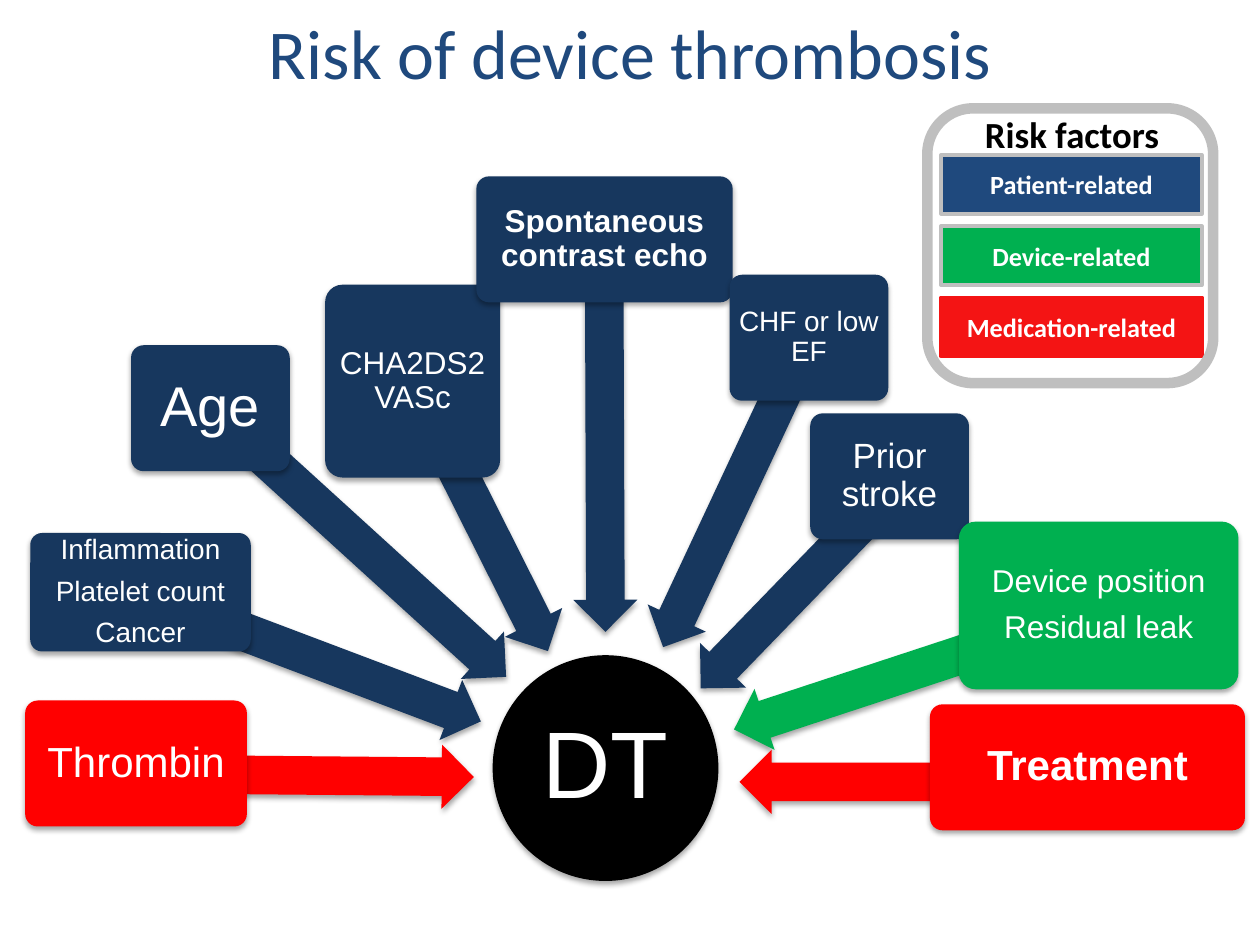
from lxml.etree import SubElement
from pptx import Presentation
from pptx.dml.color import RGBColor
from pptx.enum.shapes import MSO_SHAPE
from pptx.enum.text import MSO_ANCHOR, MSO_AUTO_SIZE, PP_ALIGN
from pptx.oxml.ns import qn
from pptx.util import Pt

NAVY, GREEN, RED, WHITE, GREY = "17375E", "00B050", "FF0000", "FFFFFF", "BFBFBF"
THICK = 36.7

FACTORS = [
    ("Inflammation\nPlatelet count\nCancer", (17.3, 304.6, 126, 67.7), 16, 2.2, False, NAVY,
     (73.4, 357.1, 208.1, 200.7)),
    ("Thrombin", (14.4, 400.3, 126.7, 72), 24, 3.6, False, RED, (77.8, 424.8, 193, 180.5)),
    ("Age", (74.9, 197.3, 90.7, 72), 32, 5, False, NAVY, (90.7, 291.6, 228.2, 222.3)),
    ("CHA2DS2VASc", (185.8, 162.7, 100, 110.2), 18, 2.9, False, NAVY,
     (187.9, 276.5, 172.8, 243.3)),
    ("Spontaneous contrast echo", (272.2, 100.8, 146.5, 72), 18, 2.9, True, NAVY,
     (233.3, 230.4, 224.6, 269.8)),
    ("CHF or low EF", (416.9, 157, 90.7, 72), 16, 2.2, False, NAVY,
     (322.6, 262.8, 195.8, 295.1)),
    ("Prior stroke", (463, 236.2, 90.7, 72), 20, 2.9, False, NAVY,
     (375.8, 316.8, 162, 314.1)),
    ("Device position\nResidual leak", (547.9, 298.1, 159.8, 95.8), 18, 2.9, False, GREEN,
     (414, 364.3, 218.9, 341.8)),
    ("Treatment", (531.4, 402.5, 180, 72), 24, 3.6, True, RED, (422.6, 428.4, 198.7, 0)),
]
KEYS = [("Patient-related", "1F497D", GREY), ("Device-related", GREEN, GREY),
        ("Medication-related", "F41414", "F41414")]


def tint(code):
    """Turn a hex string into a colour."""
    return RGBColor.from_string(code)


def shade(shape):
    """Give the shape a soft shadow straight below it."""
    effects = shape._element.spPr.find(qn("a:effectLst"))
    shadow = SubElement(effects, qn("a:outerShdw"), blurRad=str(Pt(3.1)), dist=str(Pt(1.8)),
                        dir="5400000", rotWithShape="0")
    black = SubElement(shadow, qn("a:srgbClr"), val="000000")
    SubElement(black, qn("a:alpha"), val="35000")


def draw(shapes, kind, box, fill=None, line=None, width=2):
    """Add a preset shape with plain fill and line."""
    shape = shapes.add_shape(kind, *map(Pt, box))
    shape.shadow.inherit = False
    if fill:
        shape.fill.solid()
        shape.fill.fore_color.rgb = tint(fill)
    else:
        shape.fill.background()
    if line:
        shape.line.color.rgb = tint(line)
        shape.line.width = Pt(width)
    else:
        shape.line.fill.background()
    return shape


def style(frame, size, face, color, bold=False, align=PP_ALIGN.CENTER):
    """Format every run of a text frame."""
    for para in frame.paragraphs:
        para.alignment = align
        for run in para.runs:
            run.font.size, run.font.name, run.font.bold = Pt(size), face, bold
            run.font.color.rgb = tint(color)


def label(shape, text, size, inset, bold=False):
    """Write tight, centred white lines inside a shape."""
    frame = shape.text_frame
    frame.text = text
    frame.word_wrap = True
    frame.vertical_anchor = MSO_ANCHOR.MIDDLE
    frame.margin_left = frame.margin_right = Pt(inset)
    frame.margin_top = frame.margin_bottom = Pt(inset)
    style(frame, size, "Arial", WHITE, bold)
    for para in frame.paragraphs:
        para.line_spacing = 0.9
    for para in frame.paragraphs[:-1]:
        para.space_after = Pt(0.4 * size)


def add_hub(shapes, box):
    """Draw the central disc."""
    disc = draw(shapes, MSO_SHAPE.OVAL, box, "000000")
    shade(disc)
    label(disc, "DT", 54, 2.9)


def add_factor(shapes, text, box, size, inset, bold, color, ray):
    """Draw one risk factor over the arrow that leads to the hub."""
    left, top, length, angle = ray
    arrow = draw(shapes, MSO_SHAPE.LEFT_ARROW, (left, top, length, THICK), color)
    arrow.adjustments[0] = 0.6
    arrow.rotation = angle
    shade(arrow)
    card = draw(shapes, MSO_SHAPE.ROUNDED_RECTANGLE, box, color)
    card.adjustments[0] = 0.1
    shade(card)
    label(card, text, size, inset, bold)


def add_legend(shapes, box):
    """Draw the colour key inside a rounded frame."""
    left, top, width, _ = box
    for row, (text, fill, line) in enumerate(KEYS):
        spot = (left + 7.9, top + 26.6 + 40.7 * row, width - 14.4, 33.8)
        bar = draw(shapes, MSO_SHAPE.RECTANGLE, spot, fill, line)
        bar.text_frame.text = text
        bar.text_frame.vertical_anchor = MSO_ANCHOR.MIDDLE
        style(bar.text_frame, 15, "Calibri", WHITE, True)
    head = shapes.add_textbox(Pt(left + 25.9), Pt(top - 1.4), Pt(115.2), Pt(32.4)).text_frame
    head.text = "Risk factors"
    head.word_wrap = False
    head.auto_size = MSO_AUTO_SIZE.SHAPE_TO_FIT_TEXT
    style(head, 21, "Calibri", "000000", True, PP_ALIGN.LEFT)
    draw(shapes, MSO_SHAPE.ROUNDED_RECTANGLE, box, line=GREY, width=6)


def add_title(title, box):
    """Place and format the slide title."""
    title.left, title.top, title.width, title.height = map(Pt, box)
    title.text_frame.text = "Risk of device thrombosis"
    title.text_frame.vertical_anchor = MSO_ANCHOR.MIDDLE
    style(title.text_frame, 40, "Calibri", "1F497D")


def main():
    """Build and save the slide."""
    deck = Presentation()
    deck.slide_width, deck.slide_height = Pt(720), Pt(540)
    slide = deck.slides.add_slide(deck.slide_layouts[5])
    add_title(slide.shapes.title, (90.7, -15.8, 538.6, 90))
    chart = slide.shapes.add_group_shape().shapes
    add_hub(chart, (281.5, 374.4, 129, 129))
    for factor in FACTORS:
        add_factor(chart, *factor)
    add_legend(slide.shapes.add_group_shape().shapes, (529.9, 61.9, 163.4, 157))
    deck.save("out.pptx")


if __name__ == "__main__":
    main()
